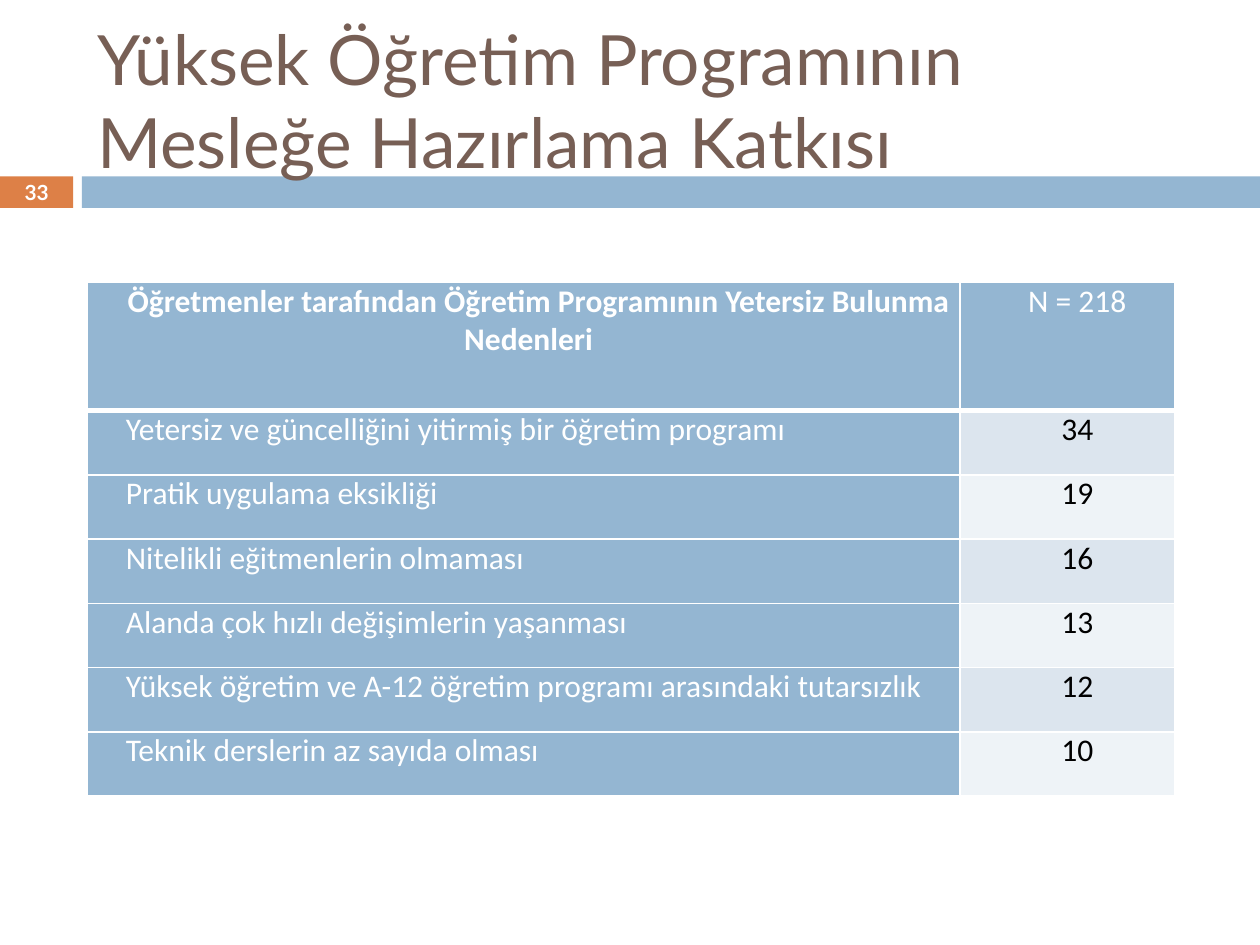
from typing import NamedTuple

from lxml.etree import SubElement
from pptx import Presentation
from pptx.dml.color import RGBColor
from pptx.enum.shapes import MSO_SHAPE as Shape
from pptx.enum.text import MSO_ANCHOR as Anchor, MSO_AUTO_SIZE as Fit, PP_ALIGN as Align
from pptx.oxml.ns import qn
from pptx.util import Inches, Pt

WIDE, HIGH = 10, 7.5
BLUE, ORANGE, BROWN = "94B6D2", "DD8047", "775F55"
WHITE, BLACK = "FFFFFF", "000000"
BANDS = ("DCE5EE", "EEF3F7")
COLS = (6.93, 1.7)
ROW = 0.51
HEAD = ("Öğretmenler tarafından Öğretim Programının Yetersiz Bulunma Nedenleri", "N = 218")
REASONS = (
    ("Yetersiz ve güncelliğini yitirmiş bir öğretim programı", 34),
    ("Pratik uygulama eksikliği", 19),
    ("Nitelikli eğitmenlerin olmaması", 16),
    ("Alanda çok hızlı değişimlerin yaşanması", 13),
    ("Yüksek öğretim ve A-12 öğretim programı arasındaki tutarsızlık", 12),
    ("Teknik derslerin az sayıda olması", 10),
)


class Box(NamedTuple):
    """Left, top, width and height as shares of the slide."""
    x: float
    y: float
    w: float
    h: float

    def place(self) -> tuple:
        return tuple(Inches(round(part * full, 2))
                     for part, full in zip(self, (WIDE, HIGH) * 2))


class Look(NamedTuple):
    font: str
    size: float
    color: str
    bold: bool = False
    align: Align = Align.LEFT


def paint(fill, color: str) -> None:
    fill.solid()
    fill.fore_color.rgb = RGBColor.from_string(color)


def write(frame, text: str, look: Look) -> None:
    frame.text = text
    para = frame.paragraphs[0]
    para.alignment = look.align
    font = para.runs[0].font
    font.name, font.size, font.bold = look.font, Pt(look.size), look.bold
    font.color.rgb = RGBColor.from_string(look.color)


def add_bar(slide, box: Box, color: str) -> None:
    bar = slide.shapes.add_shape(Shape.RECTANGLE, *box.place())
    bar.shadow.inherit = False
    paint(bar.fill, color)
    bar.line.fill.background()


def add_rule(cell, side: str, width: float) -> None:
    line = SubElement(cell._tc.get_or_add_tcPr(), qn(f"a:ln{side}"), w=str(Pt(width)))
    SubElement(SubElement(line, qn("a:solidFill")), qn("a:srgbClr"), val=WHITE)


def fill_cell(cell, row: int, col: int, text: str) -> None:
    head, label = row == 0, col == 0
    cell.margin_left = cell.margin_right = Inches(0.07)
    cell.margin_top = cell.margin_bottom = 0
    cell.vertical_anchor = Anchor.TOP
    thick = {"L": 1, "R": 1, "T": 3 if row == 1 else 1, "B": 3 if head else 1}
    for side, width in thick.items():
        add_rule(cell, side, width)
    paint(cell.fill, BLUE if head or label else BANDS[(row - 1) % 2])
    align = Align.JUSTIFY if label and not head else Align.CENTER
    color = WHITE if head or label else BLACK
    write(cell.text_frame, text, Look("Calibri", 18, color, head and label, align))
    props = cell.text_frame.paragraphs[0]._p.get_or_add_pPr()
    props.set("marL", str(Inches(0.08 if label else 0)))
    props.set("indent", str(Inches(0.16)))


def add_grid(slide, box: Box) -> None:
    rows = (HEAD, *REASONS)
    table = slide.shapes.add_table(len(rows), len(COLS), *box.place()).table
    for col, width in zip(table.columns, COLS):
        col.width = Inches(width)
    for r, row in enumerate(rows):
        table.rows[r].height = Inches(ROW * (2 if r == 0 else 1))
        for c, value in enumerate(row):
            fill_cell(table.cell(r, c), r, c, str(value))


def main() -> None:
    deck = Presentation()
    deck.slide_width, deck.slide_height = Inches(WIDE), Inches(HIGH)
    slide = deck.slides.add_slide(deck.slide_layouts[5])

    add_bar(slide, Box(0, 0.187, 0.058, 0.033), ORANGE)
    add_bar(slide, Box(0.065, 0.187, 0.935, 0.033), BLUE)

    title = slide.shapes.title
    title.left, title.top, title.width, title.height = Box(0.067, 0.033, 0.892, 0.144).place()
    title.text_frame.auto_size = Fit.NONE
    title.text_frame.vertical_anchor = Anchor.MIDDLE
    write(title.text_frame, "Yüksek Öğretim Programının Mesleğe Hazırlama Katkısı",
          Look("Lato", 39.6, BROWN))
    bars = slide.shapes._spTree
    bars.append(title._element)  # title text overlaps the blue bar

    add_grid(slide, Box(0.069, 0.299, 0.863, 0.544))

    number = slide.shapes.add_textbox(*Box(0, 0.185, 0.058, 0.036).place()).text_frame
    number.word_wrap = True
    number.vertical_anchor = Anchor.MIDDLE
    number.margin_left = number.margin_right = number.margin_top = number.margin_bottom = 0
    write(number, "33", Look("Lato", 11.9, WHITE, True, Align.CENTER))

    deck.save("out.pptx")


if __name__ == "__main__":
    main()
